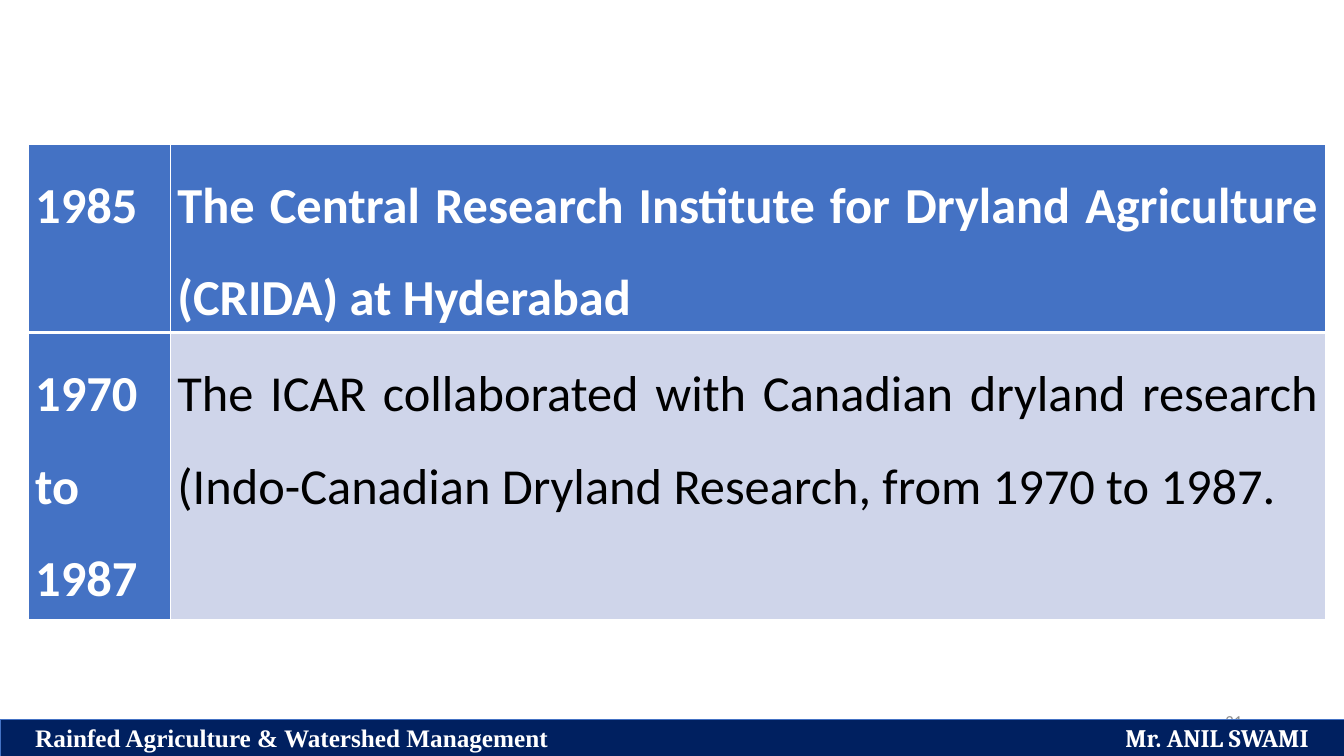
from lxml import etree
from pptx import Presentation
from pptx.dml.color import RGBColor
from pptx.enum.shapes import MSO_SHAPE
from pptx.enum.text import MSO_ANCHOR, PP_ALIGN
from pptx.oxml.ns import qn
from pptx.util import Inches, Pt

RECTANGLE = MSO_SHAPE.RECTANGLE
MIDDLE = MSO_ANCHOR.MIDDLE
LEFT, RIGHT, JUSTIFY = PP_ALIGN.LEFT, PP_ALIGN.RIGHT, PP_ALIGN.JUSTIFY

WHITE = RGBColor(0xFF, 0xFF, 0xFF)
BLACK = RGBColor(0x00, 0x00, 0x00)
GRAY = RGBColor(0x8C, 0x8C, 0x8C)
BLUE = RGBColor(0x44, 0x72, 0xC4)
PALE_BLUE = RGBColor(0xCF, 0xD5, 0xEA)
NAVY = RGBColor(0x00, 0x20, 0x60)

SLIDE_WIDTH, SLIDE_HEIGHT = 13.33, 7.5
FOOTER_HEIGHT = 0.36
FOOTER_MARGIN = 0.35
COLUMN_WIDTHS = (1.41, 11.46)
ROW_HEIGHTS = (1.87, 2.85)
EVENTS = (
    ("1985", "The Central Research Institute for Dryland Agriculture (CRIDA) at Hyderabad"),
    ("1970 to 1987", "The ICAR collaborated with Canadian dryland research "
                     "(Indo-Canadian Dryland Research, from 1970 to 1987."),
)


def add_run(paragraph, text, font_name, size, color, bold=False):
    run = paragraph.add_run()
    run.text = text
    run.font.name = font_name
    run.font.size = Pt(size)
    run.font.color.rgb = color
    run.font.bold = bold


def set_borders(cell, top, bottom):
    properties = cell._tc.get_or_add_tcPr()
    widths = (("a:lnL", 1), ("a:lnR", 1), ("a:lnT", top), ("a:lnB", bottom))
    for position, (tag, width) in enumerate(widths):
        line = etree.Element(qn(tag), w=str(Pt(width)))
        fill = etree.SubElement(line, qn("a:solidFill"))
        etree.SubElement(fill, qn("a:srgbClr"), val=str(WHITE))
        properties.insert(position, line)


def add_page_number(slide, left, top, width, height):
    box = slide.shapes.add_textbox(Inches(left), Inches(top), Inches(width), Inches(height))
    frame = box.text_frame
    frame.word_wrap = True
    frame.vertical_anchor = MIDDLE
    paragraph = frame.paragraphs[0]
    paragraph.alignment = RIGHT
    add_run(paragraph, "21", "Calibri", 12, GRAY)


def fill_cell(cell, text, highlighted):
    cell.fill.solid()
    cell.fill.fore_color.rgb = BLUE if highlighted else PALE_BLUE
    cell.margin_left = cell.margin_right = Inches(0.07)
    cell.margin_top = cell.margin_bottom = 0
    paragraph = cell.text_frame.paragraphs[0]
    paragraph.alignment = JUSTIFY
    paragraph.line_spacing = 1.5
    paragraph.space_after = Pt(8)
    add_run(paragraph, text, "Calibri", 36, WHITE if highlighted else BLACK, highlighted)


def add_timeline(slide, left, top):
    table = slide.shapes.add_table(
        len(EVENTS), len(COLUMN_WIDTHS), Inches(left), Inches(top),
        Inches(sum(COLUMN_WIDTHS)), Inches(sum(ROW_HEIGHTS))).table
    for column, width in zip(table.columns, COLUMN_WIDTHS):
        column.width = Inches(width)
    for row_index, (height, event) in enumerate(zip(ROW_HEIGHTS, EVENTS)):
        table.rows[row_index].height = Inches(height)
        is_header = row_index == 0
        for column_index, text in enumerate(event):
            cell = table.cell(row_index, column_index)
            fill_cell(cell, text, is_header or column_index == 0)
            set_borders(cell, 1 if is_header else 3, 3 if is_header else 1)


def add_footer(slide, left, top, width, height):
    bar = slide.shapes.add_shape(
        RECTANGLE, Inches(left), Inches(top), Inches(width), Inches(height))
    bar.shadow.inherit = False
    bar.fill.solid()
    bar.fill.fore_color.rgb = NAVY
    bar.line.color.rgb = BLUE
    bar.line.width = Pt(0.5)
    frame = bar.text_frame
    frame.vertical_anchor = MIDDLE
    frame.margin_left = Inches(FOOTER_MARGIN)
    frame.margin_right = Inches(0.1)
    paragraph = frame.paragraphs[0]
    paragraph.alignment = LEFT
    tabs = etree.SubElement(paragraph._p.get_or_add_pPr(), qn("a:tabLst"))
    tab_position = Inches(width - 2 * FOOTER_MARGIN)
    etree.SubElement(tabs, qn("a:tab"), pos=str(tab_position), algn="r")
    add_run(paragraph, "Rainfed Agriculture & Watershed Management\t",
            "Times New Roman", 18, WHITE, True)
    add_run(paragraph, "Mr. ANIL SWAMI", "Cambria", 18, WHITE, True)


def main():
    presentation = Presentation()
    presentation.slide_width = Inches(SLIDE_WIDTH)
    presentation.slide_height = Inches(SLIDE_HEIGHT)
    slide = presentation.slides.add_slide(presentation.slide_layouts[6])
    add_page_number(slide, 9.42, 6.95, 3, 0.4)
    add_timeline(slide, 0.28, 1.43)
    add_footer(slide, 0, SLIDE_HEIGHT - FOOTER_HEIGHT, SLIDE_WIDTH, FOOTER_HEIGHT)
    presentation.save("out.pptx")


if __name__ == "__main__":
    main()
